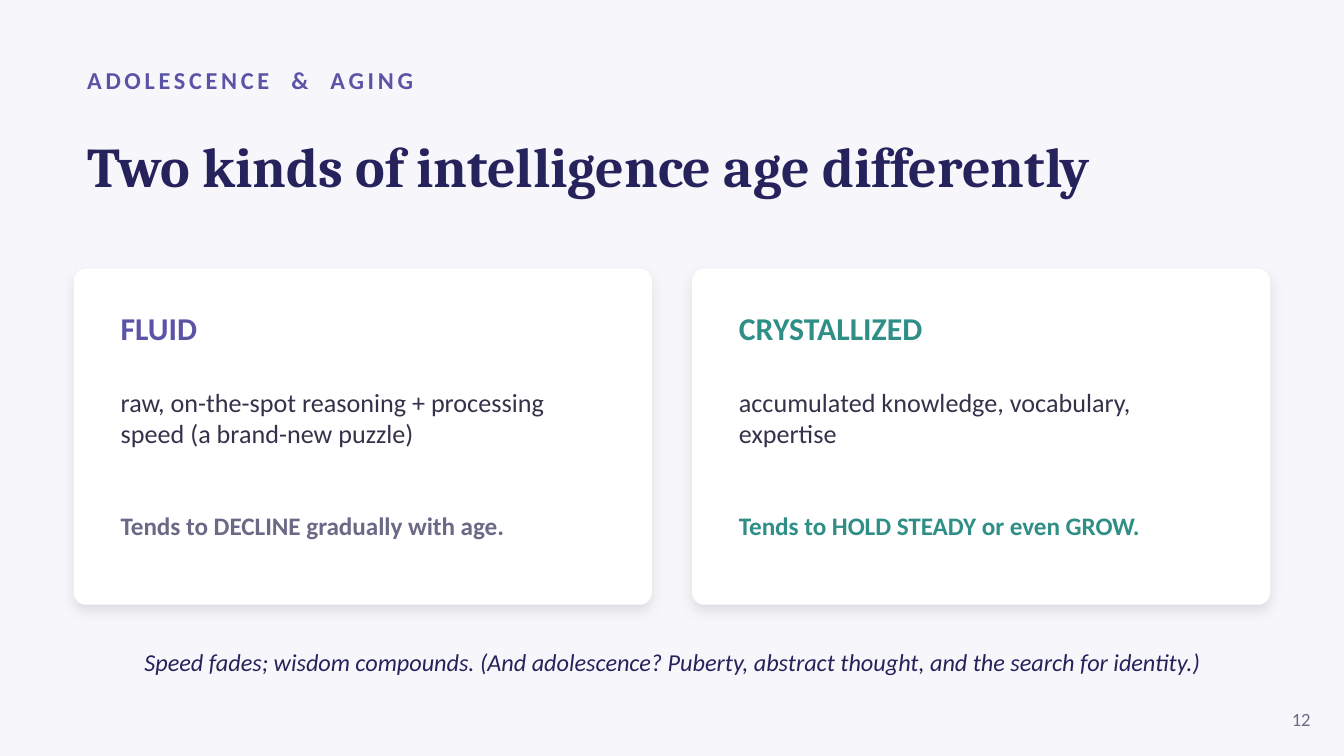
"""Build a slide that compares fluid and crystallized intelligence."""
from dataclasses import dataclass

from lxml import etree
from pptx import Presentation
from pptx import util as u
from pptx.dml.color import RGBColor
from pptx.enum import shapes, text
from pptx.oxml import ns


@dataclass(frozen=True)
class Theme:
    """Colours, fonts and type sizes of the slide."""
    paper: str = "F7F7FB"
    card: str = "FFFFFF"
    shadow: str = "000000"
    violet: str = "5B53A6"
    navy: str = "26235C"
    teal: str = "2F8F86"
    ink: str = "33324A"
    muted: str = "6B6A86"
    body_font: str = "Calibri"
    title_font: str = "Cambria"
    title: float = 30
    heading: float = 17
    body: float = 14
    trend: float = 13.5
    label: float = 13
    number: float = 10


THEME = Theme()
WIDTH = u.Inches(10)
HEIGHT = WIDTH * 9 // 16
COLUMNS = 200
MARGIN = 11
CARD_WIDTH, CARD_HEIGHT, CARD_TOP, GUTTER = 86, 50, 40, 6
PADDING = 5
LEFT, CENTER, RIGHT = text.PP_ALIGN.LEFT, text.PP_ALIGN.CENTER, text.PP_ALIGN.RIGHT

CARDS = [
    ("FLUID", "raw, on-the-spot reasoning + processing speed (a brand-new puzzle)",
     "Tends to DECLINE gradually with age.", THEME.violet, THEME.muted),
    ("CRYSTALLIZED", "accumulated knowledge, vocabulary, expertise",
     "Tends to HOLD STEADY or even GROW.", THEME.teal, THEME.teal),
]


def grid(*cells):
    """Turn square grid cells into slide lengths."""
    return [round(cell * WIDTH / COLUMNS) for cell in cells]


def add_box(page, place, anchor=text.MSO_ANCHOR.MIDDLE):
    """Add a wrapping text box and return its text frame."""
    frame = page.shapes.add_textbox(*grid(*place)).text_frame
    frame.word_wrap = True
    frame.vertical_anchor = anchor
    return frame


def style(span, size, color, font=THEME.body_font, bold=False, italic=False):
    """Format one run of text."""
    span.font.size = u.Pt(size)
    span.font.name = font
    span.font.bold = bold
    span.font.italic = italic
    span.font.color.rgb = RGBColor.from_string(color)


def add_line(page, place, words, align=LEFT, **look):
    """Add a text box with a single formatted line."""
    para = add_box(page, place).paragraphs[0]
    para.text = words
    para.alignment = align
    style(para.runs[0], **look)


def add_eyebrow(page, place, words, tracking=2, word_gap=6.9):
    """Add a letter-spaced line with wide gaps between its words."""
    para = add_box(page, place).paragraphs[0]
    for index, word in enumerate(words):
        pieces = [(word, tracking)] if index == 0 else [(" ", word_gap), (word, tracking)]
        for piece, spacing in pieces:
            span = para.add_run()
            span.text = piece
            style(span, THEME.label, THEME.violet, bold=True)
            span.font._element.set("spc", str(round(spacing * 100)))


def add_soft_shadow(shape, blur=7, distance=3, angle=90, opacity=10):
    """Give a shape a faint outer shadow."""
    shape.shadow.inherit = False
    effects = shape._element.spPr.find(ns.qn("a:effectLst"))
    shadow = etree.SubElement(
        effects, ns.qn("a:outerShdw"), blurRad=str(u.Pt(blur)),
        dist=str(u.Pt(distance)), dir=str(angle * 60000), algn="bl", rotWithShape="0")
    color = etree.SubElement(shadow, ns.qn("a:srgbClr"), val=THEME.shadow)
    etree.SubElement(color, ns.qn("a:alpha"), val=str(opacity * 1000))


def add_card(page, left):
    """Add a white rounded card."""
    card = page.shapes.add_shape(
        shapes.MSO_SHAPE.ROUNDED_RECTANGLE, *grid(left, CARD_TOP, CARD_WIDTH, CARD_HEIGHT))
    card.adjustments[0] = 0.036
    card.fill.solid()
    card.fill.fore_color.rgb = RGBColor.from_string(THEME.card)
    card.line.fill.background()
    add_soft_shadow(card)


def add_card_text(page, left, heading, body, trend, accent, trend_color):
    """Add the heading, description and trend of one card."""
    place = (left + PADDING, CARD_TOP + PADDING, CARD_WIDTH - 2 * PADDING, 42)
    frame = add_box(page, place, text.MSO_ANCHOR.TOP)
    frame.text = "\n".join((heading, body, trend))
    looks = [(THEME.heading, accent, True, 21), (THEME.body, THEME.ink, False, 33),
             (THEME.trend, trend_color, True, 0)]
    for para, (size, color, bold, gap) in zip(frame.paragraphs, looks):
        para.space_after = u.Pt(gap)
        style(para.runs[0], size, color, bold=bold)


def main():
    """Build and save the slide."""
    deck = Presentation()
    deck.slide_width, deck.slide_height = WIDTH, HEIGHT
    page = deck.slides.add_slide(deck.slide_layouts[6])
    page.background.fill.solid()
    page.background.fill.fore_color.rgb = RGBColor.from_string(THEME.paper)

    add_eyebrow(page, (MARGIN, 8.4, 180, 7), ["ADOLESCENCE", "&", "AGING"])
    add_line(page, (MARGIN, 15.6, 178, 18), "Two kinds of intelligence age differently",
             size=THEME.title, color=THEME.navy, font=THEME.title_font, bold=True)
    lefts = [MARGIN + index * (CARD_WIDTH + GUTTER) for index in range(len(CARDS))]
    for left in lefts:
        add_card(page, left)
    for left, content in zip(lefts, CARDS):
        add_card_text(page, left, *content)
    add_line(page, (MARGIN, 94, 178, 9),
             "Speed fades; wisdom compounds. (And adolescence? Puberty, abstract thought, "
             "and the search for identity.)",
             CENTER, size=THEME.label, color=THEME.navy, italic=True)
    add_line(page, (187, 104, 10, 6), "12", RIGHT, size=THEME.number, color=THEME.muted)
    deck.save("out.pptx")


if __name__ == "__main__":
    main()
